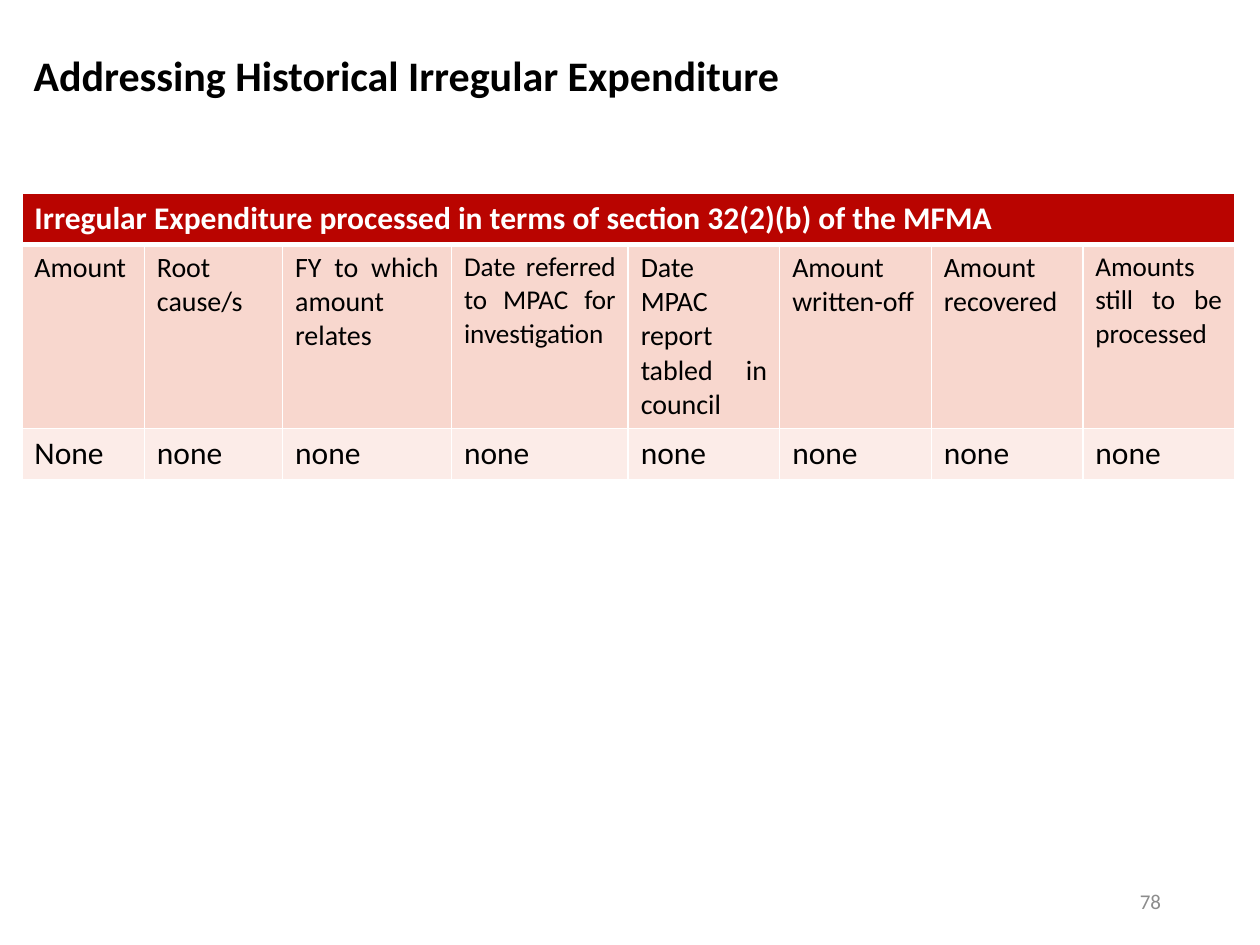
import pptx
import pptx.util
import pptx.dml.color
import pptx.enum.text
import pptx.oxml
import pptx.oxml.ns

Pt = pptx.util.Pt
ALIGN = pptx.enum.text.PP_ALIGN
ANCHOR = pptx.enum.text.MSO_ANCHOR

HEADING = "Irregular Expenditure processed in terms of section 32(2)(b) of the MFMA"
# Label, column width and text size of each column
COLUMNS = [
    ("Amount", 70, 16),
    ("Root cause/s", 79, 16),
    ("FY to which amount relates", 96.5, 16),
    ("Date referred to MPAC for investigation", 101, 15.5),
    ("Date MPAC report tabled in council", 86.6, 16),
    ("Amount written-off", 86.6, 16),
    ("Amount recovered", 86.6, 16),
    ("Amounts still to be processed", 86.6, 15.5),
]
VALUES = ["None"] + ["none"] * 7
ROW_HEIGHTS = [29.5, 105, 29.5]


def colour(value):
    return pptx.dml.color.RGBColor.from_string(value)


def write_text(frame, text, size, ink="000000", bold=False, align=ALIGN.LEFT, spacing=1.0):
    para = frame.paragraphs[0]
    for name, value in {"alignment": align, "line_spacing": spacing}.items():
        setattr(para, name, value)
    span = para.add_run()
    span.text = text
    for name, value in {"name": "Calibri", "size": Pt(size), "bold": bold}.items():
        setattr(span.font, name, value)
    span.font.color.rgb = colour(ink)


def add_title(page, text):
    title = page.shapes.title
    place = {"left": 12, "top": 6, "width": 694, "height": 77}
    for name, value in place.items():
        setattr(title, name, Pt(value))
    title.text_frame.vertical_anchor = ANCHOR.MIDDLE
    write_text(title.text_frame, text, 24, bold=True, spacing=0.9)


def add_page_number(page, text):
    box = page.shapes.add_textbox(Pt(508.5), Pt(500.5), Pt(162), Pt(28.75))
    box.text_frame.word_wrap = True
    box.text_frame.vertical_anchor = ANCHOR.MIDDLE
    write_text(box.text_frame, text, 12, "8C8C8C", align=ALIGN.RIGHT)


def set_borders(cell, widths):
    properties = cell._tc.get_or_add_tcPr()
    for index, (side, width) in enumerate(zip("LRTB", widths)):
        properties.insert(index, pptx.oxml.parse_xml(
            f'<a:ln{side} {pptx.oxml.ns.nsdecls("a")} w="{Pt(width)}"><a:solidFill>'
            f'<a:srgbClr val="FFFFFF"/></a:solidFill></a:ln{side}>'))


def format_cell(cell, fill, top=1, bottom=1):
    cell.fill.solid()
    cell.fill.fore_color.rgb = colour(fill)
    set_borders(cell, [1, 1, top, bottom])


def add_expenditure_table(page):
    widths = [width for _, width, _ in COLUMNS]
    table = page.shapes.add_table(
        len(ROW_HEIGHTS), len(COLUMNS), Pt(12.5), Pt(110.25),
        Pt(sum(widths)), Pt(sum(ROW_HEIGHTS))).table
    for column, width in zip(table.columns, widths):
        column.width = Pt(width)
    for row, height in zip(table.rows, ROW_HEIGHTS):
        row.height = Pt(height)

    # Heading across all columns
    table.cell(0, 0).merge(table.cell(0, len(COLUMNS) - 1))
    write_text(table.cell(0, 0).text_frame, HEADING, 18, "FFFFFF", bold=True)

    # Column labels and values
    for index, ((label, _, size), value) in enumerate(zip(COLUMNS, VALUES)):
        heading, name, amount = (table.cell(row, index) for row in range(3))
        format_cell(heading, "B90400", bottom=3)
        format_cell(name, "F8D7CE", top=3)
        format_cell(amount, "FCECE8")
        write_text(name.text_frame, label, size, align=ALIGN.JUSTIFY)
        write_text(amount.text_frame, value, 18)


def main():
    deck = pptx.Presentation()
    deck.slide_width, deck.slide_height = Pt(720), Pt(540)
    page = deck.slides.add_slide(deck.slide_layouts.get_by_name("Title Only"))
    add_title(page, "Addressing Historical Irregular Expenditure")
    add_expenditure_table(page)
    add_page_number(page, "78")
    deck.save("out.pptx")


if __name__ == "__main__":
    main()
